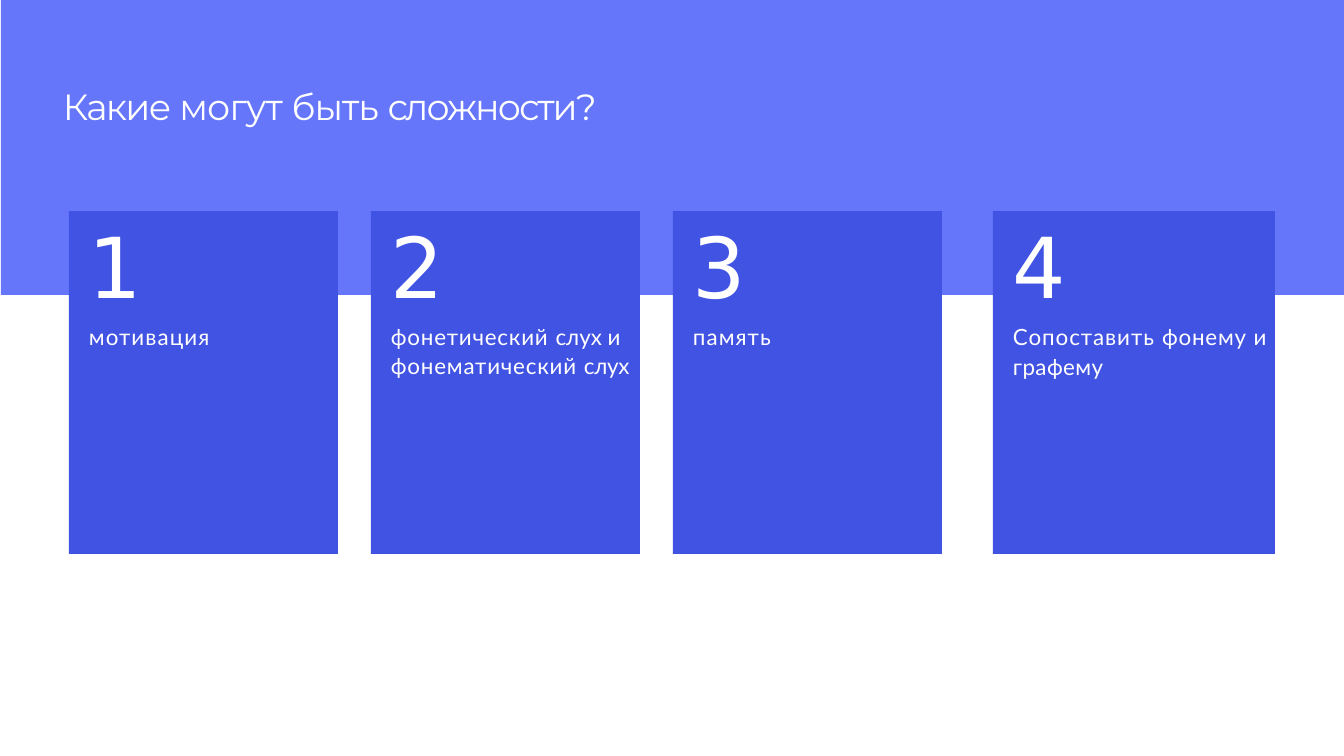
from pptx import Presentation
from pptx.dml.color import RGBColor
from pptx.enum.shapes import MSO_SHAPE
from pptx.enum.text import MSO_ANCHOR, MSO_AUTO_SIZE, PP_ALIGN
from pptx.util import Emu, Pt

COLORS = {"band": "6576FB", "card": "4153E2", "text": "FFFFFF"}
TITLE = [("Какие ", -1.2), ("могут ", -0.6), ("быть ", -0.7), ("сложности?", -1.4)]
# Each run is its text and its letter spacing in points.
CARDS = [
    ([("мотивация", 0.8)], 1, 6.1),
    ([("фонетический ", 0.6), ("слух ", 0), ("и ", 0.8),
      ("фонематический ", 0.6), ("слух", -0.2)], 1.09, 4.3),
    ([("память", 0.8)], 1, 6.1),
    ([("Сопоставить ", 0.7), ("фонему ", 0.6), ("и ", 0.8),
      ("графему", 0.3)], 1.1, 4.2),
]
STEP = 302


def px(n):
    return Emu(round(n * 914400 / 100.8))


def color(name):
    return RGBColor.from_string(COLORS[name])


def place(shape, box):
    shape.left, shape.top, shape.width, shape.height = map(px, box)


def frame(shape, top):
    """Set up a top-anchored text frame without side insets."""
    tf = shape.text_frame
    tf.word_wrap = True
    tf.auto_size = MSO_AUTO_SIZE.NONE
    tf.vertical_anchor = MSO_ANCHOR.TOP
    tf.margin_left = tf.margin_right = tf.margin_bottom = 0
    tf.margin_top = px(top)
    return tf


def write(par, runs, *, size, font, before=0, lines=1, indent=0):
    par.alignment = PP_ALIGN.LEFT
    par.space_before = Pt(before)
    par.line_spacing = lines
    props = par._p.get_or_add_pPr()
    props.set("marL", str(px(indent)))
    props.set("indent", "0")
    for text, gap in runs:
        run = par.add_run()
        run.text = text
        run.font.size = Pt(size)
        run.font.name = font
        run.font.color.rgb = color("text")
        run.font._element.set("spc", str(round(gap * 100)))


def rect(slide, box, fill):
    shape = slide.shapes.add_shape(MSO_SHAPE.RECTANGLE, *map(px, box))
    shape.shadow.inherit = False
    shape.fill.solid()
    shape.fill.fore_color.rgb = color(fill)
    shape.line.fill.background()
    return shape


def header(slide, box):
    x, y, w, h = box
    band = rect(slide, box, "band")
    title = slide.shapes.title
    title._element.addprevious(band._element)
    place(title, (x + 61, y + 83, 584, 46))
    write(frame(title, 1).paragraphs[0], TITLE,
          size=26, font="Montserrat", before=1, indent=1)


def card(slide, box, number, runs, lines, before):
    tf = frame(rect(slide, box, "card"), 3)
    write(tf.paragraphs[0], [(str(number), -4.3)],
          size=60, font="DejaVu Sans", before=2.5, indent=20)
    write(tf.add_paragraph(), runs, size=16, font="Lato",
          before=before, lines=lines, indent=20)


def cards(slide, box):
    """Place equal cards by step; the last is wider and ends at the right edge."""
    x, y, w, h = box
    for i, item in enumerate(CARDS):
        last = i == len(CARDS) - 1
        wide = 282 if last else 269
        left = x + w - wide if last else x + i * STEP
        card(slide, (left, y, wide, h), i + 1, *item)


def main():
    prs = Presentation()
    prs.slide_width, prs.slide_height = px(1344), px(756)
    slide = prs.slides.add_slide(prs.slide_layouts[5])
    header(slide, (1, 0, 1343, 295))
    cards(slide, (69, 211, 1206, 343))
    prs.save("out.pptx")


if __name__ == "__main__":
    main()
